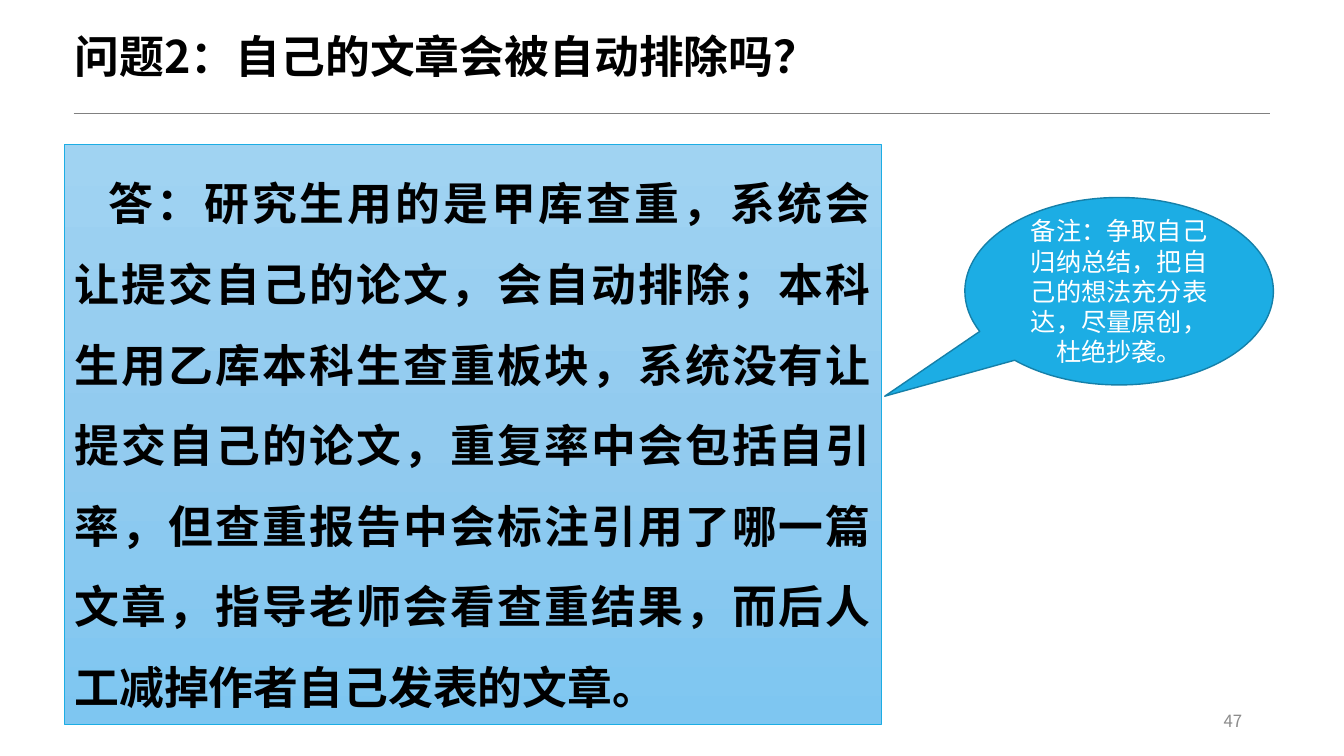
from copy import deepcopy
from lxml.etree import SubElement
from pptx import Presentation
from pptx.dml.color import RGBColor as RGB
from pptx.enum.shapes import MSO_CONNECTOR as Conn, MSO_SHAPE as Kind
from pptx.enum.text import MSO_ANCHOR as Anchor, MSO_AUTO_SIZE as Auto, PP_ALIGN as Align
from pptx.oxml.ns import qn
from pptx.util import Inches, Pt

BLACK = RGB(0x00, 0x00, 0x00)
WHITE = RGB(0xFF, 0xFF, 0xFF)
GRAY = RGB(0x80, 0x80, 0x80)
PALE = RGB(0x8C, 0x8C, 0x8C)
BLUE = RGB(0x1C, 0xAD, 0xE4)
DEEP = RGB(0x15, 0x80, 0xA9)
SHADES = [RGB(0xA0, 0xD3, 0xF2), RGB(0x92, 0xCB, 0xEF), RGB(0x7E, 0xC6, 0xF1)]
HAN = "Noto Sans CJK SC"
LEFT = 0.64


def box(*sides):
    return [Inches(side) for side in sides]


def write(shape, text, anchor, align, **looks):
    """Put one paragraph in the shape; looks are font attributes."""
    frame = shape.text_frame
    frame.word_wrap = True
    frame.auto_size = Auto.NONE
    frame.vertical_anchor = anchor
    para = frame.paragraphs[0]
    para.alignment = align
    run = para.add_run()
    run.text = text
    font = run.font
    font.color.rgb = looks.pop("color")
    for key, value in looks.items():
        setattr(font, key, value)
    SubElement(run._r.get_or_add_rPr(), qn("a:ea"), typeface=HAN)
    return para


deck = Presentation()
deck.slide_width, deck.slide_height = box(13.33, 7.5)
slide = deck.slides.add_slide(deck.slide_layouts[5])
shapes = slide.shapes

# Title and rule
title = shapes.title
title.left, title.top, title.width, title.height = box(LEFT, 0.23, 7.71, 0.64)
write(title, "问题2：自己的文章会被自动排除吗？", Anchor.TOP, Align.LEFT,
      name=HAN, size=Pt(32), bold=True, color=BLACK)

rule = shapes.add_connector(Conn.STRAIGHT, *box(0.73, 1.12, 12.6, 1.12))
rule.line.color.rgb = GRAY
rule.line.width = Pt(0.25)
SubElement(rule._element.spPr, qn("a:effectLst"))

# Answer panel
panel = shapes.add_shape(Kind.RECTANGLE, *box(LEFT, 1.43, 8.1, 5.76))
panel.shadow.inherit = False
panel.line.color.rgb = BLUE
panel.line.width = Pt(0.5)
fill = panel.fill
fill.gradient()
fill.gradient_angle = 270
first = panel._element.spPr.find(".//" + qn("a:gs"))
first.addnext(deepcopy(first))
for i, (stop, shade) in enumerate(zip(fill.gradient_stops, SHADES)):
    stop.position = i / 2
    stop.color.rgb = shade
answer = write(
    panel,
    "答：研究生用的是甲库查重，系统会让提交自己的论文，会自动排除；"
    "本科生用乙库本科生查重板块，系统没有让提交自己的论文，重复率中会包括自引率，"
    "但查重报告中会标注引用了哪一篇文章，指导老师会看查重结果，"
    "而后人工减掉作者自己发表的文章。",
    Anchor.TOP, Align.JUSTIFY, name="Calibri", size=Pt(32), bold=True, color=BLACK)
answer.line_spacing = 1.5
answer._p.get_or_add_pPr().set("indent", str(Inches(0.34)))

# Side note
note = shapes.add_shape(Kind.OVAL_CALLOUT, *box(9.57, 1.96, 3.06, 1.86))
note.shadow.inherit = False
note.adjustments[0] = -0.76
note.adjustments[1] = 0.56
note.fill.solid()
note.fill.fore_color.rgb = BLUE
note.line.color.rgb = DEEP
note.line.width = Pt(1)
write(note, "备注：争取自己归纳总结，把自己的想法充分表达，尽量原创，杜绝抄袭。",
      Anchor.MIDDLE, Align.CENTER, name=HAN, size=Pt(18), color=WHITE)

# Page number
page = shapes.add_textbox(*box(9.42, 6.95, 3, 0.4))
write(page, "47", Anchor.MIDDLE, Align.RIGHT, name=HAN, size=Pt(12), color=PALE)

deck.save("out.pptx")
